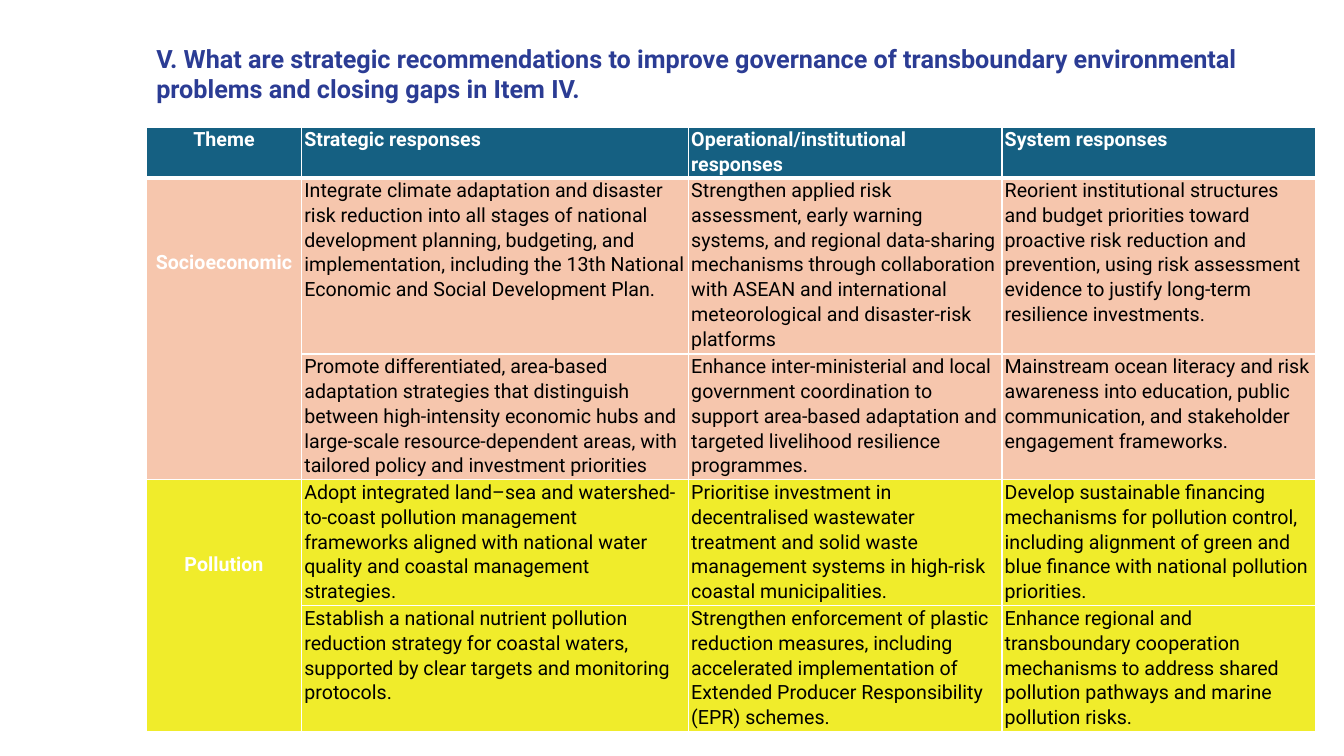
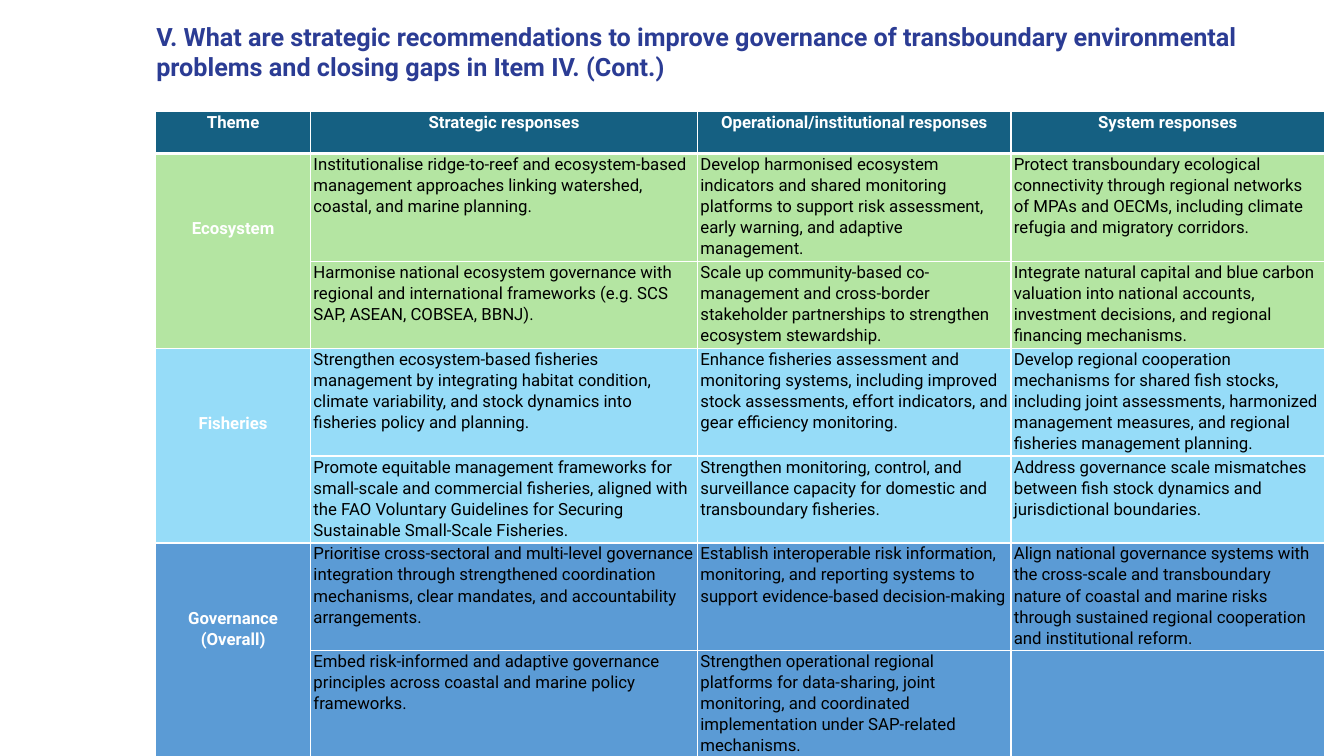
from dataclasses import dataclass
from typing import NamedTuple

from lxml.etree import SubElement
from pptx import Presentation
from pptx.dml.color import RGBColor as Rgb
from pptx.enum.text import MSO_AUTO_SIZE as AutoSize, PP_ALIGN as Align
from pptx.oxml.ns import qn
from pptx.slide import Slide
from pptx.table import Table, _Cell as Cell
from pptx.util import Cm, Length, Pt


@dataclass(frozen=True)
class Theme:
    font: str = "Roboto"
    title: str = "2B3C94"
    header: str = "156082"
    light: str = "FFFFFF"
    dark: str = "000000"
    socioeconomic: str = "F6C6AD"
    pollution: str = "F0EC2B"
    ecosystem: str = "B4E5A2"
    fisheries: str = "96DCF8"
    governance: str = "5B9BD5"
    title_size: float = 18
    large_size: float = 14
    small_size: float = 12
    line_spacing: float = 1.07
    space_after: float = 8
    thin: float = 1
    thick: float = 3


class Topic(NamedTuple):
    name: str
    fill: str
    responses: list[tuple[str, str, str]]


class Page(NamedTuple):
    title: str
    title_top: Length
    table_left: Length
    table_top: Length
    size: float
    header_align: Align
    label_drop: Length
    row_heights: list[Length]
    topics: list[Topic]


THEME = Theme()
TITLE = (
    "V. What are strategic recommendations to improve governance of "
    "transboundary environmental problems and closing gaps in Item IV."
)
HEADINGS = (
    "Theme",
    "Strategic responses",
    "Operational/institutional responses",
    "System responses",
)
COLUMN_WIDTHS = (Cm(3.91), Cm(9.75), Cm(7.9), Cm(7.9))
TITLE_LEFT, TITLE_WIDTH, TITLE_HEIGHT = Cm(3.69), Cm(29.95), Cm(1.8)
CELL_MARGIN = Cm(0.07)

PAGES = [
    Page(
        title=TITLE,
        title_top=Cm(0.97),
        table_left=Cm(3.69),
        table_top=Cm(3.2),
        size=THEME.large_size,
        header_align=Align.LEFT,
        label_drop=Cm(1.81),
        row_heights=[Cm(1.28), Cm(4.43), Cm(3.17), Cm(3.17), Cm(3.17)],
        topics=[
            Topic("Socioeconomic", THEME.socioeconomic, [
                (
                    "Integrate climate adaptation and disaster risk reduction into all stages of national "
                    "development planning, budgeting, and implementation, including the 13th National "
                    "Economic and Social Development Plan.",
                    "Strengthen applied risk assessment, early warning systems, and regional data-sharing "
                    "mechanisms through collaboration with ASEAN and international meteorological and "
                    "disaster-risk platforms",
                    "Reorient institutional structures and budget priorities toward proactive risk reduction "
                    "and prevention, using risk assessment evidence to justify long-term resilience investments.",
                ),
                (
                    "Promote differentiated, area-based adaptation strategies that distinguish between "
                    "high-intensity economic hubs and large-scale resource-dependent areas, with tailored "
                    "policy and investment priorities",
                    "Enhance inter-ministerial and local government coordination to support area-based "
                    "adaptation and targeted livelihood resilience programmes.",
                    "Mainstream ocean literacy and risk awareness into education, public communication, and "
                    "stakeholder engagement frameworks.",
                ),
            ]),
            Topic("Pollution", THEME.pollution, [
                (
                    "Adopt integrated land–sea and watershed-to-coast pollution management frameworks aligned "
                    "with national water quality and coastal management strategies.",
                    "Prioritise investment in decentralised wastewater treatment and solid waste management "
                    "systems in high-risk coastal municipalities.",
                    "Develop sustainable financing mechanisms for pollution control, including alignment of "
                    "green and blue finance with national pollution priorities.",
                ),
                (
                    "Establish a national nutrient pollution reduction strategy for coastal waters, supported "
                    "by clear targets and monitoring protocols.",
                    "Strengthen enforcement of plastic reduction measures, including accelerated "
                    "implementation of Extended Producer Responsibility (EPR) schemes.",
                    "Enhance regional and transboundary cooperation mechanisms to address shared pollution "
                    "pathways and marine pollution risks.",
                ),
            ]),
        ],
    ),
    Page(
        title=f"{TITLE} (Cont.)",
        title_top=Cm(0.41),
        table_left=Cm(3.92),
        table_top=Cm(2.8),
        size=THEME.small_size,
        header_align=Align.CENTER,
        label_drop=Cm(1.62),
        row_heights=[Cm(1.07), Cm(2.7), Cm(2.19), Cm(2.7), Cm(2.19), Cm(2.7), Cm(2.7)],
        topics=[
            Topic("Ecosystem", THEME.ecosystem, [
                (
                    "Institutionalise ridge-to-reef and ecosystem-based management approaches linking "
                    "watershed, coastal, and marine planning.",
                    "Develop harmonised ecosystem indicators and shared monitoring platforms to support risk "
                    "assessment, early warning, and adaptive management.",
                    "Protect transboundary ecological connectivity through regional networks of MPAs and "
                    "OECMs, including climate refugia and migratory corridors.",
                ),
                (
                    "Harmonise national ecosystem governance with regional and international frameworks "
                    "(e.g. SCS SAP, ASEAN, COBSEA, BBNJ).",
                    "Scale up community-based co-management and cross-border stakeholder partnerships to "
                    "strengthen ecosystem stewardship.",
                    "Integrate natural capital and blue carbon valuation into national accounts, investment "
                    "decisions, and regional financing mechanisms.",
                ),
            ]),
            Topic("Fisheries", THEME.fisheries, [
                (
                    "Strengthen ecosystem-based fisheries management by integrating habitat condition, climate "
                    "variability, and stock dynamics into fisheries policy and planning.",
                    "Enhance fisheries assessment and monitoring systems, including improved stock "
                    "assessments, effort indicators, and gear efficiency monitoring.",
                    "Develop regional cooperation mechanisms for shared fish stocks, including joint "
                    "assessments, harmonized management measures, and regional fisheries management planning.",
                ),
                (
                    "Promote equitable management frameworks for small-scale and commercial fisheries, aligned "
                    "with the FAO Voluntary Guidelines for Securing Sustainable Small-Scale Fisheries.",
                    "Strengthen monitoring, control, and surveillance capacity for domestic and transboundary "
                    "fisheries.",
                    "Address governance scale mismatches between fish stock dynamics and jurisdictional "
                    "boundaries.",
                ),
            ]),
            Topic("Governance (Overall)", THEME.governance, [
                (
                    "Prioritise cross-sectoral and multi-level governance integration through strengthened "
                    "coordination mechanisms, clear mandates, and accountability arrangements.",
                    "Establish interoperable risk information, monitoring, and reporting systems to support "
                    "evidence-based decision-making",
                    "Align national governance systems with the cross-scale and transboundary nature of "
                    "coastal and marine risks through sustained regional cooperation and institutional reform.",
                ),
                (
                    "Embed risk-informed and adaptive governance principles across coastal and marine policy "
                    "frameworks.",
                    "Strengthen operational regional platforms for data-sharing, joint monitoring, and "
                    "coordinated implementation under SAP-related mechanisms.",
                    "",
                ),
            ]),
        ],
    ),
]


def add_run(paragraph, text: str, size: float, color: str, bold: bool) -> None:
    run = paragraph.add_run()
    run.text = text
    run.font.name = THEME.font
    run.font.size = Pt(size)
    run.font.bold = bold
    run.font.color.rgb = Rgb.from_string(color)


def set_borders(cell: Cell, top: float, bottom: float) -> None:
    properties = cell._tc.get_or_add_tcPr()
    widths = {"a:lnL": THEME.thin, "a:lnR": THEME.thin, "a:lnT": top, "a:lnB": bottom}
    for tag, width in widths.items():
        line = SubElement(properties, qn(tag), w=str(Pt(width)))
        SubElement(SubElement(line, qn("a:solidFill")), qn("a:srgbClr"), val=THEME.light)


def style_cell(cell: Cell, fill: str, top: float = THEME.thin, bottom: float = THEME.thin) -> None:
    set_borders(cell, top, bottom)
    cell.fill.solid()
    cell.fill.fore_color.rgb = Rgb.from_string(fill)
    cell.margin_left = cell.margin_right = CELL_MARGIN
    cell.margin_top = cell.margin_bottom = Cm(0)


def write_cell(cell: Cell, text: str, size: float, color: str, bold: bool, align: Align) -> None:
    paragraph = cell.text_frame.paragraphs[0]
    paragraph.alignment = align
    paragraph.line_spacing = THEME.line_spacing
    paragraph.space_after = Pt(THEME.space_after)
    if text:
        add_run(paragraph, text, size, color, bold)


def add_title(slide: Slide, page: Page) -> None:
    frame = slide.shapes.add_textbox(TITLE_LEFT, page.title_top, TITLE_WIDTH, TITLE_HEIGHT).text_frame
    frame.word_wrap = True
    frame.auto_size = AutoSize.SHAPE_TO_FIT_TEXT
    add_run(frame.paragraphs[0], page.title, THEME.title_size, THEME.title, True)


def fill_topic(table: Table, topic: Topic, first_row: int, page: Page) -> None:
    for row, responses in enumerate(topic.responses, first_row):
        top = THEME.thick if row == 1 else THEME.thin
        for column, text in enumerate(("", *responses)):
            cell = table.cell(row, column)
            style_cell(cell, topic.fill, top=top)
            if column:
                write_cell(cell, text, page.size, THEME.dark, False, Align.LEFT)
    label = table.cell(first_row, 0)
    label.merge(table.cell(first_row + len(topic.responses) - 1, 0))
    label.margin_top = page.label_drop
    write_cell(label, topic.name, page.size, THEME.light, True, Align.CENTER)


def add_responses(slide: Slide, page: Page) -> None:
    table = slide.shapes.add_table(
        len(page.row_heights), len(HEADINGS), page.table_left, page.table_top,
        Length(sum(COLUMN_WIDTHS)), Length(sum(page.row_heights)),
    ).table
    table.horz_banding = False
    for column, width in zip(table.columns, COLUMN_WIDTHS):
        column.width = width
    for row, height in zip(table.rows, page.row_heights):
        row.height = height
    for column, heading in enumerate(HEADINGS):
        cell = table.cell(0, column)
        style_cell(cell, THEME.header, bottom=THEME.thick)
        align = page.header_align if column else Align.CENTER
        write_cell(cell, heading, page.size, THEME.light, True, align)
    first_row = 1
    for topic in page.topics:
        fill_topic(table, topic, first_row, page)
        first_row += len(topic.responses)


def main() -> None:
    deck = Presentation()
    deck.slide_width, deck.slide_height = Cm(33.87), Cm(19.05)
    for page in PAGES:
        slide = deck.slides.add_slide(deck.slide_layouts[6])
        add_title(slide, page)
        add_responses(slide, page)
    deck.save("out.pptx")


if __name__ == "__main__":
    main()
